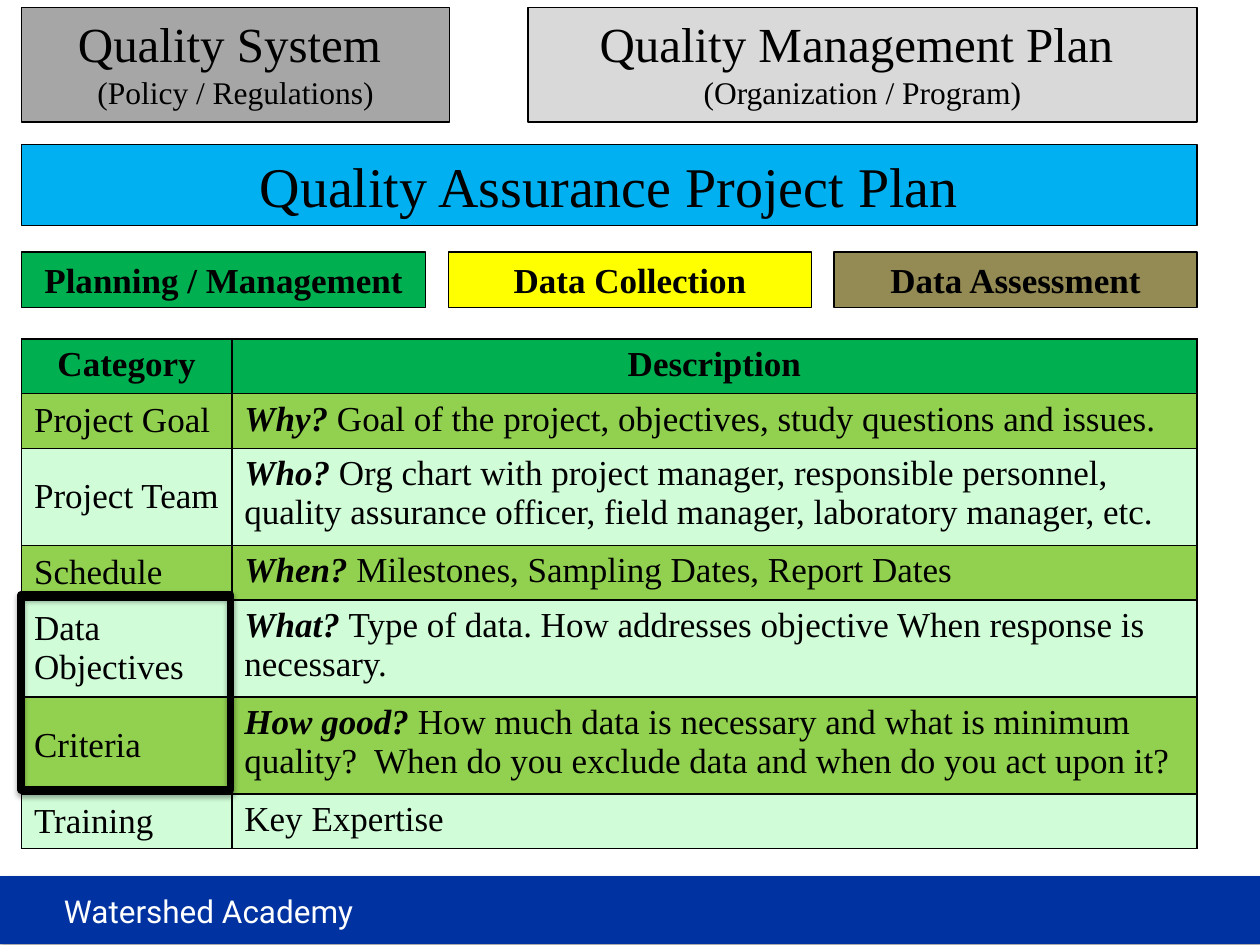
from collections import namedtuple

from lxml.etree import SubElement
from pptx import Presentation
from pptx.dml.color import RGBColor
from pptx.enum.shapes import MSO_SHAPE
from pptx.enum.text import MSO_ANCHOR, PP_ALIGN
from pptx.oxml.ns import qn
from pptx.util import Inches, Pt

Box = namedtuple("Box", "left top width height")

# Grid of 100 columns by 75 rows on a 10 x 7.5 inch page
UNIT = Inches(0.1)
LEFT, WIDTH = 1.7, 93.3
SERIF = "Times New Roman"
GREEN, LIME, MINT = "00B050", "92D050", "D0FCD8"

PHASES = [
    ("Planning / Management", 32.1, GREEN),
    ("Data Collection", 28.8, "FFFF00"),
    ("Data Assessment", 28.8, "948A54"),
]
ONE_LINE, TWO_LINES = 4.34, 7.7
CATEGORIES = [
    ("Project Goal", "Why? ",
     "Goal of the project, objectives, study questions and issues.", ONE_LINE),
    ("Project Team", "Who? ",
     "Org chart with project manager, responsible personnel, quality assurance "
     "officer, field manager, laboratory manager, etc.", TWO_LINES),
    ("Schedule", "When? ", "Milestones, Sampling Dates, Report Dates", ONE_LINE),
    ("Data Objectives", "What? ",
     "Type of data. How addresses objective When response is necessary.", TWO_LINES),
    ("Criteria", "How good? ",
     "How much data is necessary and what is minimum quality?  "
     "When do you exclude data and when do you act upon it?", TWO_LINES),
    ("Training", "", "Key Expertise", ONE_LINE),
]


def color(value):
    return RGBColor.from_string(value)


def grid(*lengths):
    return [round(length * UNIT) for length in lengths]


def add_span(para, text, size=20, font=SERIF, ink="000000", bold=False,
             italic=False, align=None):
    """Add formatted text to a paragraph."""
    if align is not None:
        para.alignment = align
    span = para.add_run()
    span.text = text
    span.font.name, span.font.size = font, Pt(size)
    span.font.bold, span.font.italic = bold, italic
    span.font.color.rgb = color(ink)


def add_soft_shadow(shape):
    effects = shape._element.spPr.find(qn("a:effectLst"))
    shadow = SubElement(effects, qn("a:outerShdw"), blurRad="40000",
                        dist="23000", dir="5400000", rotWithShape="0")
    black = SubElement(shadow, qn("a:srgbClr"), val="000000")
    SubElement(black, qn("a:alpha"), val="35000")


def add_panel(page, box, fill=None, line="000000", weight=0.75):
    panel = page.shapes.add_shape(MSO_SHAPE.RECTANGLE, *grid(*box))
    panel.shadow.inherit = False
    if fill:
        panel.fill.solid()
        panel.fill.fore_color.rgb = color(fill)
    else:
        panel.fill.background()
    panel.line.color.rgb = color(line)
    panel.line.width = Pt(weight)
    return panel


def add_label(page, box, fill, *lines, bold=False):
    """Add a panel with centred lines, each a (text, size) pair."""
    frame = add_panel(page, box, fill).text_frame
    frame.vertical_anchor = MSO_ANCHOR.TOP
    frame.word_wrap = True
    for index, (text, size) in enumerate(lines):
        para = frame.add_paragraph() if index else frame.paragraphs[0]
        add_span(para, text, size=size, bold=bold, align=PP_ALIGN.CENTER)


def add_phases(page, box):
    gap = (box.width - sum(width for _, width, _ in PHASES)) / (len(PHASES) - 1)
    left = box.left
    for name, width, fill in PHASES:
        add_label(page, Box(left, box.top, width, box.height), fill,
                  (name, 20), bold=True)
        left += width + gap


def style_cell(cell, fill):
    properties = cell._tc.get_or_add_tcPr()
    for side in ("a:lnL", "a:lnR", "a:lnT", "a:lnB"):
        border = SubElement(properties, qn(side), w=str(Pt(1)))
        solid = SubElement(border, qn("a:solidFill"))
        SubElement(solid, qn("a:srgbClr"), val="000000")
    cell.fill.solid()
    cell.fill.fore_color.rgb = color(fill)


def add_categories(page, box):
    heights = [ONE_LINE] + [entry[-1] for entry in CATEGORIES]
    table = page.shapes.add_table(len(heights), 2, *grid(*box)).table
    first_width = 16.7
    for column, width in zip(table.columns, grid(first_width, box.width - first_width)):
        column.width = width
    for row, height in zip(table.rows, grid(*heights)):
        row.height = height

    # Header row
    for cell, title in zip(table.rows[0].cells, ("Category", "Description")):
        style_cell(cell, GREEN)
        add_span(cell.text_frame.paragraphs[0], title, bold=True,
                 align=PP_ALIGN.CENTER)

    # Banded body rows
    for index, (category, question, answer, _) in enumerate(CATEGORIES):
        name_cell, text_cell = table.rows[index + 1].cells
        for cell in (name_cell, text_cell):
            style_cell(cell, MINT if index % 2 else LIME)
        name_cell.vertical_anchor = MSO_ANCHOR.MIDDLE
        add_span(name_cell.text_frame.paragraphs[0], category)
        para = text_cell.text_frame.paragraphs[0]
        if question:
            add_span(para, question, bold=True, italic=True)
        add_span(para, answer)


def add_footer(page, box):
    add_soft_shadow(add_panel(page, box, "0033A1", line="0032A1"))
    name_box = page.shapes.add_textbox(*grid(4.1, box.top + 0.7, 33.6, 4.1))
    name_box.text_frame.word_wrap = True
    add_span(name_box.text_frame.paragraphs[0], "Watershed Academy",
             size=18, font="Roboto", ink="FFFFFF")


def main():
    deck = Presentation()
    deck.slide_width, deck.slide_height = grid(100, 75)
    page = deck.slides.add_slide(deck.slide_layouts[6])

    add_footer(page, Box(0, 69.6, 100, 5.3))

    # Plan hierarchy
    add_label(page, Box(41.9, 0.6, 53.1, 9.1), "D9D9D9",
              ("Quality Management Plan ", 28), ("(Organization / Program)", 18))
    add_label(page, Box(LEFT, 11.5, WIDTH, 6.4), "00B0F0",
              ("Quality Assurance Project Plan", 32))
    add_label(page, Box(LEFT, 0.6, 34, 9.1), "A6A6A6",
              ("Quality System ", 28), ("(Policy / Regulations)", 18))
    add_phases(page, Box(LEFT, 20, WIDTH, 4.4))

    # Category table with the highlighted pair of rows
    add_categories(page, Box(LEFT, 26.9, WIDTH, 40.3))
    add_soft_shadow(add_panel(page, Box(LEFT, 47.2, 16.6, 15.5), weight=4.5))

    deck.save("out.pptx")


if __name__ == "__main__":
    main()
